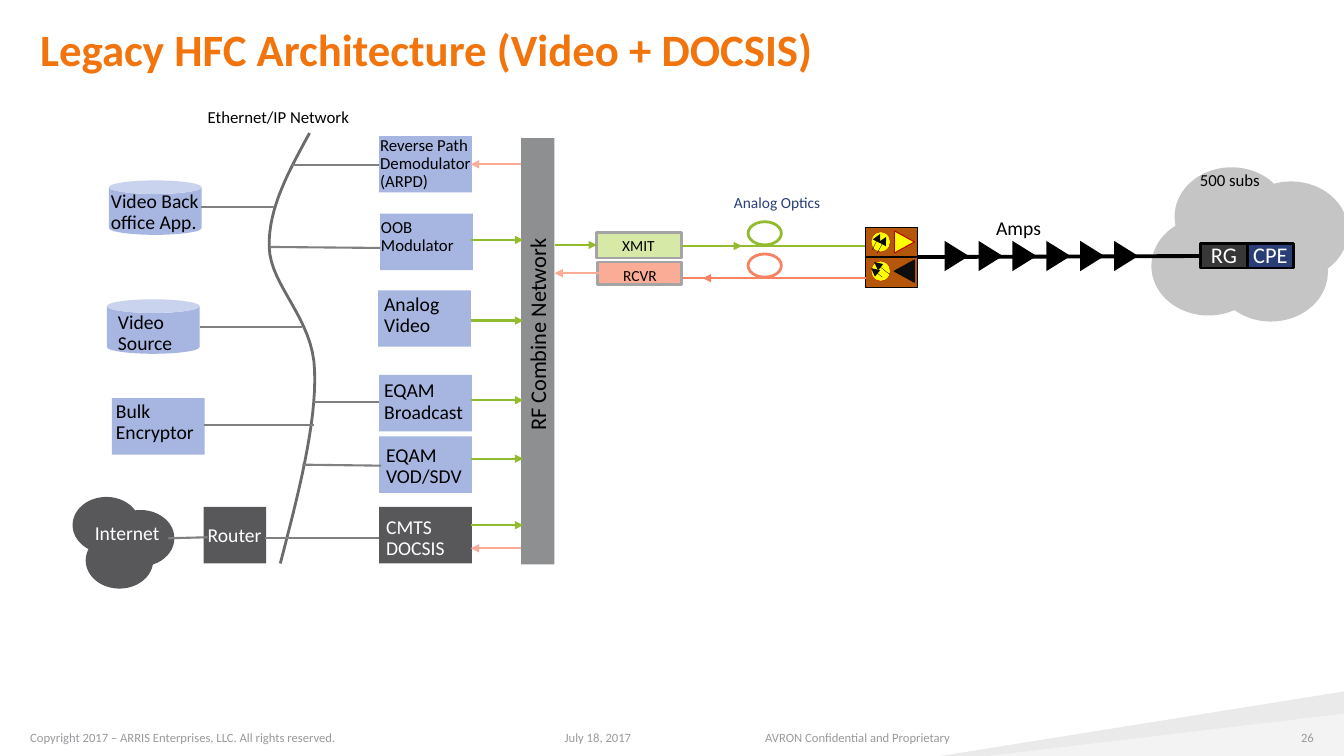
"""Build a slide of a legacy HFC network for video and DOCSIS."""
from lxml import etree
from pptx import Presentation
from pptx.dml.color import RGBColor
from pptx.enum import shapes, text
from pptx.oxml import ns
from pptx.util import Inches, Pt

BLACK = RGBColor(0, 0, 0)
WHITE = RGBColor(255, 255, 255)
ORANGE = RGBColor(0xF1, 0x74, 0x0D)
NAVY = RGBColor(0x29, 0x3E, 0x77)
BLUE = RGBColor(0xA7, 0xB6, 0xE1)
DARK = RGBColor(0x58, 0x58, 0x5A)
COAL = RGBColor(0x37, 0x37, 0x37)
INK = RGBColor(0x0D, 0x0D, 0x0D)
STEEL = RGBColor(0x8D, 0x8F, 0x90)
WIRE = RGBColor(0x80, 0x80, 0x80)
TRUNK = RGBColor(0x69, 0x6B, 0x6C)
EDGE = RGBColor(0xA4, 0xA4, 0xA4)
CLOUD = RGBColor(0xC5, 0xC5, 0xC5)
FOOT = RGBColor(0x9A, 0x9A, 0x9D)
MIST = RGBColor(0xEA, 0xEA, 0xEA)
PALE = RGBColor(0xF3, 0xF3, 0xF3)
GREEN = RGBColor(0x93, 0xBB, 0x2F)
LIME = RGBColor(0xD6, 0xE9, 0xA7)
PINK = RGBColor(0xFA, 0xAC, 0x97)
CORAL = RGBColor(0xF7, 0x83, 0x63)
RUST = RGBColor(0xB5, 0x57, 0x0A)
RED = RGBColor(0xC0, 0, 0)
YELLOW = RGBColor(255, 255, 0)

deck = Presentation()
deck.slide_width, deck.slide_height = Inches(13.33), Inches(7.5)
slide = deck.slides.add_slide(deck.slide_layouts[6])
tree = slide.shapes
Form = shapes.MSO_SHAPE
Anchor, Align = text.MSO_ANCHOR, text.PP_ALIGN


def draw(form, box, fill=None, edge=None, width=2, turn=0):
    item = tree.add_shape(form, *map(Inches, box))
    item.shadow.inherit = False
    item.rotation = turn
    if fill is None:
        item.fill.background()
    else:
        item.fill.solid()
        item.fill.fore_color.rgb = fill
    if edge is None:
        item.line.fill.background()
    else:
        item.line.color.rgb = edge
        item.line.width = Pt(width)
    return item


def write(words, box=None, item=None, size=14, color=BLACK, bold=False, wrap=False,
          align=Align.LEFT, anchor=Anchor.TOP, pad=(0, 0), lead=0.9, turn=0):
    item = item or tree.add_textbox(*map(Inches, box))
    item.rotation = turn
    frame = item.text_frame
    frame.word_wrap = wrap
    frame.vertical_anchor = anchor
    frame.margin_left = frame.margin_right = Inches(pad[0])
    frame.margin_top = frame.margin_bottom = Inches(pad[1])
    frame.text = words
    for para in frame.paragraphs:
        para.alignment = align
        para.line_spacing = lead
        font = para.font
        font.name, font.size, font.bold = "Calibri", Pt(size), bold
        font.color.rgb = color


for left, top, base, fill in ((9.33, 6.86, 9.97, MIST), (9.8, 7.08, 10.37, PALE)):
    pen = tree.build_freeform(Inches(13.33), Inches(top), 1)
    pen.add_line_segments([(Inches(x), Inches(7.5)) for x in (13.33, base, left)])
    wedge = pen.convert_to_shape()
    wedge.shadow.inherit = False
    wedge.fill.solid()
    wedge.fill.fore_color.rgb = fill
    wedge.line.fill.background()

for left, top in ((11.65, 1.66), (11.42, 2.15), (12.24, 1.8), (12.04, 2.21)):
    draw(Form.OVAL, (left, top, 1.13, 0.98), CLOUD)
for left, top in ((1.06, 5.06), (0.72, 4.93), (0.85, 5.28)):
    draw(Form.OVAL, (left, top, 0.67, 0.56), DARK)

draw(Form.RECTANGLE, (5.17, 1.37, 0.33, 4.23), STEEL)
draw(Form.RECTANGLE, (2.02, 5.03, 0.62, 0.56), DARK)
for left, top, fill in ((3.76, 1.35, BLUE), (3.77, 2.12, BLUE), (3.75, 2.88, BLUE),
                        (3.76, 3.72, BLUE), (3.76, 4.33, BLUE), (3.76, 5.03, DARK),
                        (1.11, 3.95, BLUE)):
    draw(Form.RECTANGLE, (left, top, 0.92, 0.56), fill)
for left, top in ((1.08, 1.79), (1.06, 2.97)):
    draw(Form.CAN, (left, top, 0.92, 0.54), BLUE)

draw(Form.RECTANGLE, (5.92, 2.31, 0.84, 0.25), LIME, EDGE)
draw(Form.RECTANGLE, (5.93, 2.6, 0.83, 0.22), PINK, EDGE)
for top, edge in ((2.2, GREEN), (2.52, CORAL)):
    draw(Form.OVAL, (7.42, top, 0.33, 0.23), None, edge)

for top, fill, edge, turn in ((2.26, YELLOW, RED, 90), (2.55, INK, INK, 270)):
    draw(Form.RECTANGLE, (8.58, top, 0.52, 0.3), RUST, BLACK, 0.75)
    draw(Form.ISOSCELES_TRIANGLE, (8.86, top + 0.04, 0.22, 0.2), fill, edge, 0.75, turn)
    draw(Form.OVAL, (8.64, top + 0.04, 0.19, 0.2), YELLOW, RED, 0.25)

curve = [(3.07, 1.32), (2.87, 1.69), (2.66, 2.06), (2.67, 2.45), (2.68, 2.84),
         (3.11, 3.16), (3.12, 3.68), (3.14, 4.2), (2.96, 4.9), (2.78, 5.59)]
dots = []
for start in (0, 3, 6):
    for step in range(1, 17):
        t = step / 16
        rates = ((1 - t) ** 3, 3 * t * (1 - t) ** 2, 3 * t * t * (1 - t), t ** 3)
        knots = curve[start:start + 4]
        dots.append(tuple(Inches(sum(r * k[axis] for r, k in zip(rates, knots)))
                          for axis in (0, 1)))
pen = tree.build_freeform(*map(Inches, curve[0]), 1)
pen.add_line_segments(dots, close=False)
trunk = pen.convert_to_shape()
trunk.shadow.inherit = False
trunk.fill.background()
trunk.line.color.rgb = TRUNK
trunk.line.width = Pt(2)

links = [
    (WIRE, 1.5, False, ((3.76, 1.64, 2.9, 1.64), (3.77, 2.46, 2.68, 2.45),
                        (3.76, 3.99, 3.11, 3.99), (3.78, 4.62, 3, 4.61),
                        (3.76, 5.34, 2.63, 5.34), (2.06, 5.33, 1.67, 5.34),
                        (2.72, 2.05, 1.99, 2.05), (3, 3.24, 1.98, 3.24),
                        (3.11, 4.22, 2.02, 4.22))),
    (GREEN, 1.5, True, [(4.67, y, 5.19, y) for y in (2.38, 3.18, 3.97, 4.55, 5.21)]),
    (GREEN, 1.5, True, ((5.5, 2.43, 5.92, 2.43), (6.79, 2.44, 7.36, 2.44))),
    (GREEN, 1.5, False, ((6.76, 2.44, 8.58, 2.44),)),
    (PINK, 1.5, True, ((5.17, 1.63, 4.67, 1.63), (5.17, 5.44, 4.67, 5.44),
                       (5.95, 2.71, 5.5, 2.71))),
    (CORAL, 1.5, False, ((6.77, 2.76, 8.59, 2.76),)),
    (CORAL, 1.5, True, ((7.42, 2.76, 6.97, 2.76),)),
    (BLACK, 2.75, False, ((9.1, 2.55, 11.93, 2.54),)),
    (INK, 0.25, True, ((8.65, 2.48, 8.73, 2.32), (8.7, 2.51, 8.79, 2.35),
                       (8.75, 2.75, 8.64, 2.66), (8.82, 2.72, 8.67, 2.6))),
]
for color, width, arrow, runs in links:
    for run in runs:
        link = tree.add_connector(shapes.MSO_CONNECTOR.STRAIGHT, *map(Inches, run))
        link.line.color.rgb = color
        link.line.width = Pt(width)
        props = link.element.spPr
        if arrow:
            etree.SubElement(props.find(ns.qn("a:ln")), ns.qn("a:tailEnd"), type="triangle")
        etree.SubElement(props, ns.qn("a:effectLst"))

for count in range(6):
    draw(Form.ISOSCELES_TRIANGLE, (9.34 + 0.336 * count, 2.42, 0.3, 0.24), BLACK, turn=90)
for words, left, fill in (("RG", 11.91, COAL), ("CPE", 12.37, NAVY)):
    unit = draw(Form.RECTANGLE, (left, 2.42, 0.46, 0.24), fill, BLACK)
    write(words, item=unit, size=16, color=WHITE, wrap=True, align=Align.CENTER)

write("Legacy HFC Architecture (Video + DOCSIS)", (0.3, 0.3, 9.83, 1), size=32,
      color=ORANGE, bold=True, wrap=True, pad=(0.1, 0), lead=0.85)
write("RF Combine Network", (4.36, 3.17, 1.97, 0.24), size=16, turn=270)
write("OOB Modulator", (3.68, 2.12, 0.99, 0.46), size=12, wrap=True, pad=(0.1, 0.05))
write("Reverse Path Demodulator\n(ARPD)", (3.77, 1.36, 0.98, 0.55), size=12, wrap=True)
for words, box in (("Video Back office App.", (1.1, 1.9, 0.94, 0.42)),
                   ("Video Source", (1.17, 3.1, 0.74, 0.42)),
                   ("Bulk\nEncryptor", (1.15, 3.98, 0.94, 0.42)),
                   ("Analog Video", (3.81, 2.92, 0.89, 0.42)),
                   ("EQAM\nBroadcast", (3.81, 3.78, 0.86, 0.42)),
                   ("EQAM\nVOD/SDV", (3.83, 4.42, 0.84, 0.42))):
    write(words, box, wrap=True)
write("CMTS\nDOCSIS", (3.83, 5.13, 0.8, 0.42), color=WHITE, wrap=True)
for words, box, size, color in (
        ("Internet", (0.94, 5.19, 0.65, 0.21), 14, WHITE),
        ("Router", (2.06, 5.21, 0.54, 0.21), 14, WHITE),
        ("Amps", (9.88, 2.17, 0.45, 0.21), 14, BLACK),
        ("Ethernet/IP Network", (2.06, 1.08, 1.42, 0.18), 12, BLACK),
        ("500 subs", (11.9, 1.71, 0.6, 0.18), 12, BLACK),
        ("Analog Optics", (7.28, 1.94, 0.86, 0.17), 11, NAVY),
        ("XMIT", (6.17, 2.36, 0.33, 0.17), 11, BLACK),
        ("RCVR", (6.18, 2.66, 0.34, 0.17), 11, BLACK)):
    write(words, box, size=size, color=color)
for words, left, width, align in (
        ("Copyright 2017 – ARRIS Enterprises, LLC. All rights reserved.", 0.3, 4.17, Align.LEFT),
        ("July 18, 2017", 4.33, 3.2, Align.CENTER),
        ("AVRON Confidential and Proprietary", 7.59, 4.86, Align.LEFT),
        ("26", 12.44, 0.59, Align.RIGHT)):
    write(words, (left, 7.19, width, 0.2), size=9, color=FOOT, wrap=True, align=align,
          anchor=Anchor.BOTTOM, lead=1.0)

deck.save("out.pptx")
